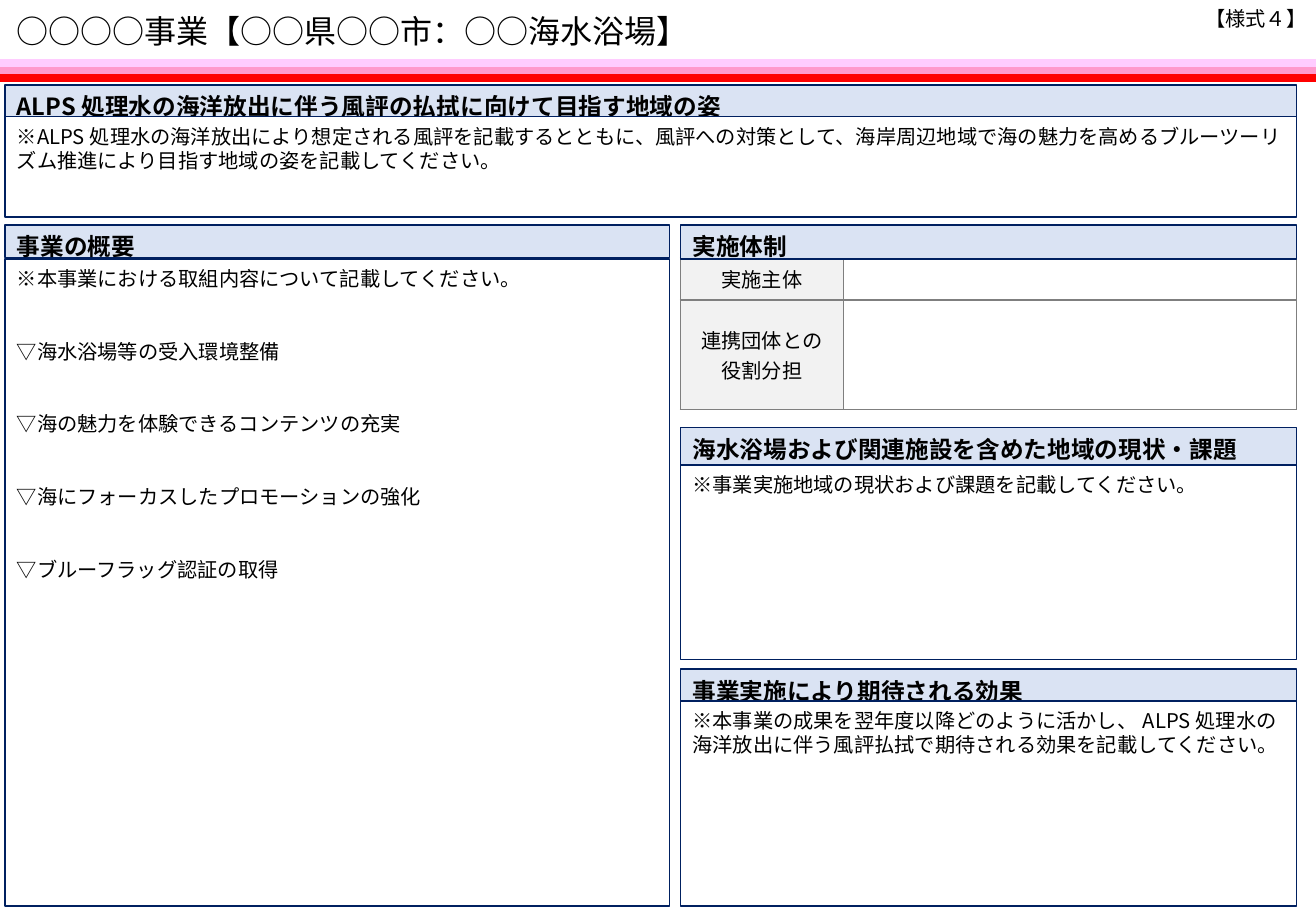
from lxml.etree import SubElement
from pptx import Presentation
from pptx.dml.color import RGBColor
from pptx.enum.shapes import MSO_CONNECTOR, MSO_SHAPE
from pptx.enum.text import MSO_ANCHOR, PP_ALIGN
from pptx.oxml import parse_xml
from pptx.oxml.ns import nsdecls, qn
from pptx.util import Inches, Pt

FONT = "Noto Sans CJK JP"
COLORS = {
    "text": "000000", "navy": "002060", "heading": "DAE3F3", "white": "FFFFFF",
    "label": "F2F2F2", "grid": "7F7F7F",
    "pale pink": "FFCCFF", "pink": "FF99CC", "red": "FF0000",
}


def write(frame, lines, size, bold=False, align=PP_ALIGN.LEFT, spacing=None, gap=0):
    frame.word_wrap = True
    for index, line in enumerate(lines):
        paragraph = frame.paragraphs[0] if index == 0 else frame.add_paragraph()
        paragraph.text = line
        paragraph.alignment = align
        paragraph.line_spacing = spacing
        paragraph.space_before = Pt(gap if index else 0)
        font = paragraph.font
        font.size, font.bold, font.name = Pt(size), bold, FONT
        font.color.rgb = RGBColor.from_string(COLORS["text"])
        # Japanese glyphs take the East Asian typeface
        SubElement(paragraph._p.pPr.find(qn("a:defRPr")), qn("a:ea"), typeface=FONT)


def add_panel(box, fill, lines, size, bold=False, gap=0):
    panel = slide.shapes.add_shape(MSO_SHAPE.RECTANGLE, *map(Inches, box))
    panel.shadow.inherit = False
    panel.fill.solid()
    panel.fill.fore_color.rgb = RGBColor.from_string(COLORS[fill])
    panel.line.color.rgb = RGBColor.from_string(COLORS["navy"])
    panel.line.width = Pt(1)
    frame = panel.text_frame
    frame.vertical_anchor = MSO_ANCHOR.TOP
    frame.margin_top = Inches(0.06)
    write(frame, lines, size, bold, spacing=Pt(size * 1.2), gap=gap)


prs = Presentation()
prs.slide_width, prs.slide_height = Inches(10.83), Inches(7.5)
slide = prs.slides.add_slide(prs.slide_layouts[6])

# Title, form number and the striped rule
captions = [
    ((0.04, 0.01, 9.83, 0.52), "○○○○事業【○○県○○市：○○海水浴場】", 19, PP_ALIGN.LEFT, 0.9),
    ((9.17, 0, 1.68, 0.3), "【様式４】", 12, PP_ALIGN.RIGHT, None),
]
for box, caption, size, align, spacing in captions:
    frame = slide.shapes.add_textbox(*map(Inches, box)).text_frame
    frame.vertical_anchor = MSO_ANCHOR.MIDDLE
    write(frame, [caption], size, align=align, spacing=spacing)

for y, color, width in [(0.52, "pale pink", 4.5), (0.59, "pink", 5), (0.64, "red", 4.75)]:
    stripe = slide.shapes.add_connector(
        MSO_CONNECTOR.STRAIGHT, 0, Inches(y), prs.slide_width, Inches(y))
    stripe.line.color.rgb = RGBColor.from_string(COLORS[color])
    stripe.line.width = Pt(width)
    SubElement(stripe._element.spPr, qn("a:effectLst"))

# Organisation table
table = slide.shapes.add_table(
    2, 2, Inches(5.6), Inches(2.12), Inches(5.07), Inches(1.25)).table
table.first_row = table.horz_banding = False
for column, width in zip(table.columns, (1.34, 3.73)):
    column.width = Inches(width)
for row, height, label in zip(table.rows, (0.35, 0.9), ("実施主体", "連携団体との役割分担")):
    row.height = Inches(height)
    for cell, text, fill in zip(row.cells, (label, ""), ("label", "white")):
        cell.vertical_anchor = MSO_ANCHOR.MIDDLE
        write(cell.text_frame, [text], 12, align=PP_ALIGN.CENTER)
        properties = cell._tc.get_or_add_tcPr()
        for side in ("lnL", "lnR", "lnT", "lnB"):
            properties.append(parse_xml(
                f'<a:{side} {nsdecls("a")} w="12700"><a:solidFill>'
                f'<a:srgbClr val="{COLORS["grid"]}"/></a:solidFill></a:{side}>'))
        cell.fill.solid()
        cell.fill.fore_color.rgb = RGBColor.from_string(COLORS[fill])

# Sections: left, width, heading top and height, heading, body top and height, body lines
sections = [
    (0.04, 10.63, 0.7, 0.27, "ALPS処理水の海洋放出に伴う風評の払拭に向けて目指す地域の姿", 0.96, 0.83,
     ["※ALPS処理水の海洋放出により想定される風評を記載するとともに、風評への対策として、"
      "海岸周辺地域で海の魅力を高めるブルーツーリズム推進により目指す地域の姿を記載してください。"]),
    (0.04, 5.47, 1.85, 0.27, "事業の概要", 2.13, 5.33,
     ["※本事業における取組内容について記載してください。",
      "▽海水浴場等の受入環境整備",
      "▽海の魅力を体験できるコンテンツの充実",
      "▽海にフォーカスしたプロモーションの強化",
      "▽ブルーフラッグ認証の取得"]),
    (5.6, 5.07, 1.85, 0.28, "実施体制", None, None, None),
    (5.6, 5.07, 3.52, 0.31, "海水浴場および関連施設を含めた地域の現状・課題", 3.83, 1.6,
     ["※事業実施地域の現状および課題を記載してください。"]),
    (5.6, 5.07, 5.51, 0.33, "事業実施により期待される効果", 5.77, 1.69,
     ["※本事業の成果を翌年度以降どのように活かし、ALPS処理水の海洋放出に伴う"
      "風評払拭で期待される効果を記載してください。"]),
]
for left, width, top, height, heading, body_top, body_height, body in sections:
    add_panel((left, top, width, height), "heading", [heading], 14, bold=True)
    if body:
        add_panel((left, body_top, width, body_height), "white", body, 12, gap=28.8)

prs.save("out.pptx")
